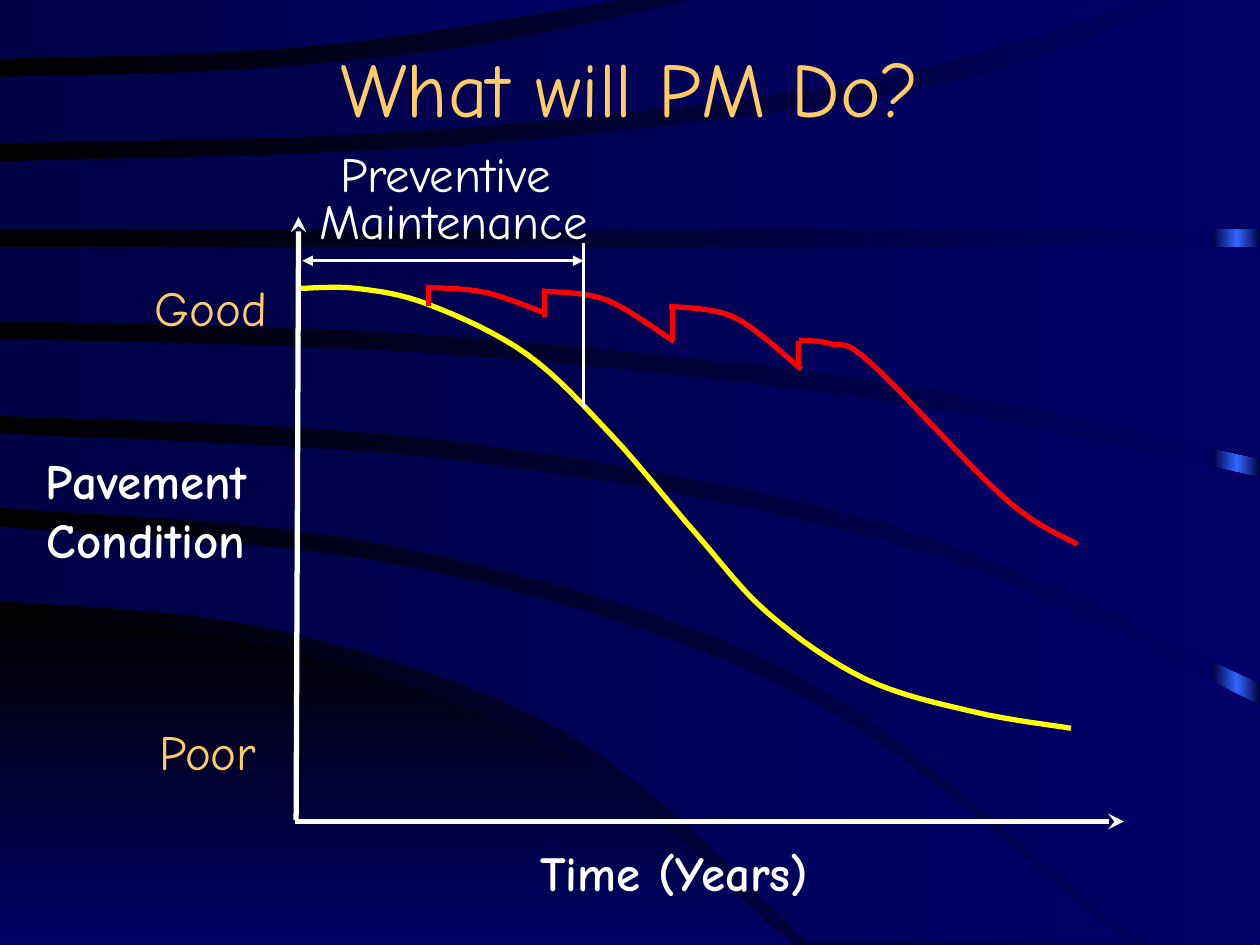
from copy import deepcopy

from lxml import etree
from pptx import Presentation
from pptx.dml.color import RGBColor
from pptx.enum.shapes import MSO_CONNECTOR, MSO_SHAPE
from pptx.enum.text import MSO_ANCHOR, PP_ALIGN
from pptx.oxml.ns import qn
from pptx.util import Inches, Pt

STRAIGHT = MSO_CONNECTOR.STRAIGHT
RECTANGLE = MSO_SHAPE.RECTANGLE
MIDDLE = MSO_ANCHOR.MIDDLE
LEFT, CENTER = PP_ALIGN.LEFT, PP_ALIGN.CENTER
rgb = RGBColor.from_string
FONT = "Comic Neue"
WHITE, GOLD, YELLOW, RED = "FFFFFF", "FFCC66", "FFFF00", "FF0000"
BLACK, NIGHT, NAVY, BLUE = "000000", "000044", "000066", "3366FF"
STEPS = 8


def smooth(points):
    padded = [points[0], *points, points[-1]]
    path = [points[0]]
    for a, b, c, d in zip(padded, padded[1:], padded[2:], padded[3:]):
        for step in range(1, STEPS + 1):
            t = step / STEPS
            path.append(tuple(
                q + t * (r - p) / 2
                + t * t * (2 * p - 5 * q + 4 * r - s) / 2
                + t ** 3 * (3 * q - p - 3 * r + s) / 2
                for p, q, r, s in zip(a, b, c, d)))
    return [(Inches(x), Inches(y)) for x, y in path]


def shade(fill, colors, angle=0):
    fill.gradient()
    fill.gradient_angle = angle
    if len(colors) == 3:
        last = fill.gradient_stops[1]._gs
        last.addprevious(deepcopy(last))
    for index, (stop, color) in enumerate(zip(fill.gradient_stops, colors)):
        stop.color.rgb = rgb(color)
        stop.position = index / (len(colors) - 1)


prs = Presentation()
prs.slide_width, prs.slide_height = Inches(10), Inches(7.5)
slide = prs.slides.add_slide(prs.slide_layouts[5])
shapes = slide.shapes
shade(slide.background.fill, [BLACK, NAVY])

glow = shapes.add_shape(RECTANGLE, Inches(9.63), 0, Inches(0.37), Inches(7.5))
glow.shadow.inherit = False
glow.line.fill.background()
shade(glow.fill, [NIGHT, BLUE, NIGHT])

bands = [
    ([(0, 4.91), (2.18, 5.14), (4.62, 6.06), (6.28, 7.5)], [(0, 7.5), (6.28, 7.5)]),
    ([(0, 4.18), (3.35, 4.52), (6.44, 5.57), (8.93, 7.48)],
     [(0, 4.77), (2.21, 5), (4.54, 5.84), (6.42, 7.48)]),
    ([(0, 3.44), (3.84, 3.68), (7.38, 4.4), (10, 5.6)],
     [(0, 4.03), (3.11, 4.33), (6.36, 5.37), (9.09, 7.48), (10, 7.48)]),
    ([(0, 2.69), (3.49, 2.81), (7.14, 3.2), (10, 3.79)],
     [(0, 3.3), (3.51, 3.49), (7.11, 4.18), (10, 5.42)]),
    ([(0, 1.96), (10, 1.96)], [(0, 2.55), (3.32, 2.65), (7.02, 3.03), (10, 3.64)]),
    ([(0, 1.28), (3.72, 1.15), (7.34, 0.7), (9.43, 0), (10, 0)], [(0, 1.82), (10, 1.82)]),
    ([(0, 0.61), (1.97, 0.55), (3.83, 0.35), (5.5, 0)],
     [(0, 1.14), (3.41, 1.03), (6.83, 0.64), (9.12, 0)]),
    ([(0, 0), (4.9, 0)], [(0, 0.47), (2.53, 0.36), (4.9, 0)]),
]
for index, (upper, lower) in enumerate(bands):
    outline = smooth(upper) + smooth(lower)[::-1]
    builder = shapes.build_freeform(*outline[0], scale=1.0)
    builder.add_line_segments(outline[1:], close=True)
    band = builder.convert_to_shape()
    band.shadow.inherit = False
    band.line.fill.background()
    if index:
        shade(band.fill, [NIGHT, NAVY])
    else:
        shade(band.fill, [BLACK, NAVY], 270)

curves = [
    ([(2.36, 2.29), (2.84, 2.29), (3.41, 2.42), (4.18, 2.81), (4.85, 3.45), (5.52, 4.23),
      (6.1, 4.87), (6.87, 5.39), (7.73, 5.65), (8.5, 5.78)], YELLOW),
    ([(3.38, 2.28), (3.85, 2.32), (4.34, 2.49)], RED),
    ([(4.3, 2.31), (4.81, 2.38), (5.35, 2.71)], RED),
    ([(5.31, 2.43), (5.83, 2.52), (6.36, 2.93)], RED),
    ([(6.34, 2.7), (6.6, 2.73), (6.91, 2.88), (7.98, 3.96), (8.55, 4.32)], RED),
]
for points, color in curves:
    track = smooth(points)
    builder = shapes.build_freeform(*track[0], scale=1.0)
    builder.add_line_segments(track[1:], close=False)
    curve = builder.convert_to_shape()
    curve.shadow.inherit = False
    curve.fill.background()
    curve.line.color.rgb = rgb(color)
    curve.line.width = Pt(3)

lines = [
    (2.34, 6.52, 8.92, 6.52, WHITE, 3, {"tailEnd": "stealth"}),
    (2.37, 1.72, 2.35, 6.51, WHITE, 3, {"headEnd": "stealth"}),
    (4.63, 1.93, 4.63, 3.24, WHITE, 1.5, {}),
    (2.4, 2.07, 4.63, 2.07, WHITE, 1.5, {"headEnd": "triangle", "tailEnd": "triangle"}),
]
repairs = [(3.4, 2.28, 2.43), (4.32, 2.31, 2.52), (5.34, 2.43, 2.69), (6.34, 2.71, 2.9)]
lines += [(x, top, x, bottom, RED, 3, {}) for x, top, bottom in repairs]
for x1, y1, x2, y2, color, width, arrowheads in lines:
    line = shapes.add_connector(STRAIGHT, Inches(x1), Inches(y1), Inches(x2), Inches(y2))
    line.line.color.rgb = rgb(color)
    line.line.width = Pt(width)
    for end, kind in arrowheads.items():
        etree.SubElement(line.line._get_or_add_ln(), qn(f"a:{end}"), type=kind)
    etree.SubElement(line._element.spPr, qn("a:effectLst"))

labels = [
    (0, 3.53, 2.32, 1.03, ["Pavement", "Condition"], WHITE, True),
    (4.19, 6.64, 2.78, 0.57, ["Time (Years)"], WHITE, True),
    (2.18, 1.09, 2.84, 0.94, ["Preventive ", "Maintenance"], WHITE, False),
    (1.13, 2.15, 1.22, 0.57, ["Good"], GOLD, False),
    (1.17, 5.68, 1.12, 0.57, ["Poor"], GOLD, False),
]
for left, top, width, height, texts, color, bold in labels:
    label = shapes.add_textbox(Inches(left), Inches(top), Inches(width), Inches(height))
    frame = label.text_frame
    frame.word_wrap = len(texts) > 1
    for index, text in enumerate(texts):
        paragraph = frame.add_paragraph() if index else frame.paragraphs[0]
        paragraph.alignment = CENTER if len(texts) > 1 else LEFT
        if text == "Maintenance":
            paragraph.line_spacing = 0.8
        run = paragraph.add_run()
        run.text = text
        run.font.name, run.font.size, run.font.bold = FONT, Pt(28), bold
        run.font.color.rgb = rgb(color)

title = shapes.title
title.left, title.top, title.width, title.height = Inches(0.5), Inches(0.25), Inches(9), Inches(0.87)
title.text_frame.vertical_anchor = MIDDLE
heading = title.text_frame.paragraphs[0]
heading.alignment = CENTER
run = heading.add_run()
run.text = "What will PM Do?"
run.font.name, run.font.size = FONT, Pt(44)
run.font.color.rgb = rgb(GOLD)
shapes.element.append(title._element)

prs.save("out.pptx")
